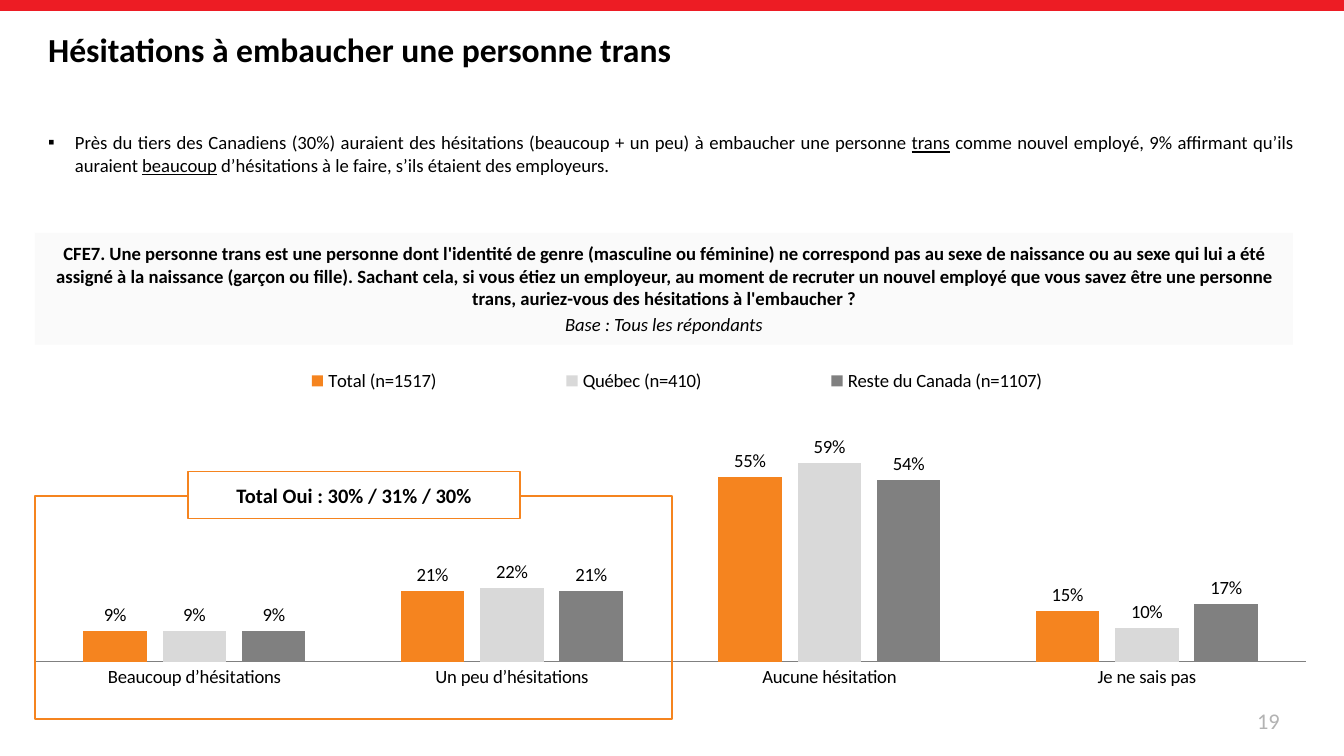
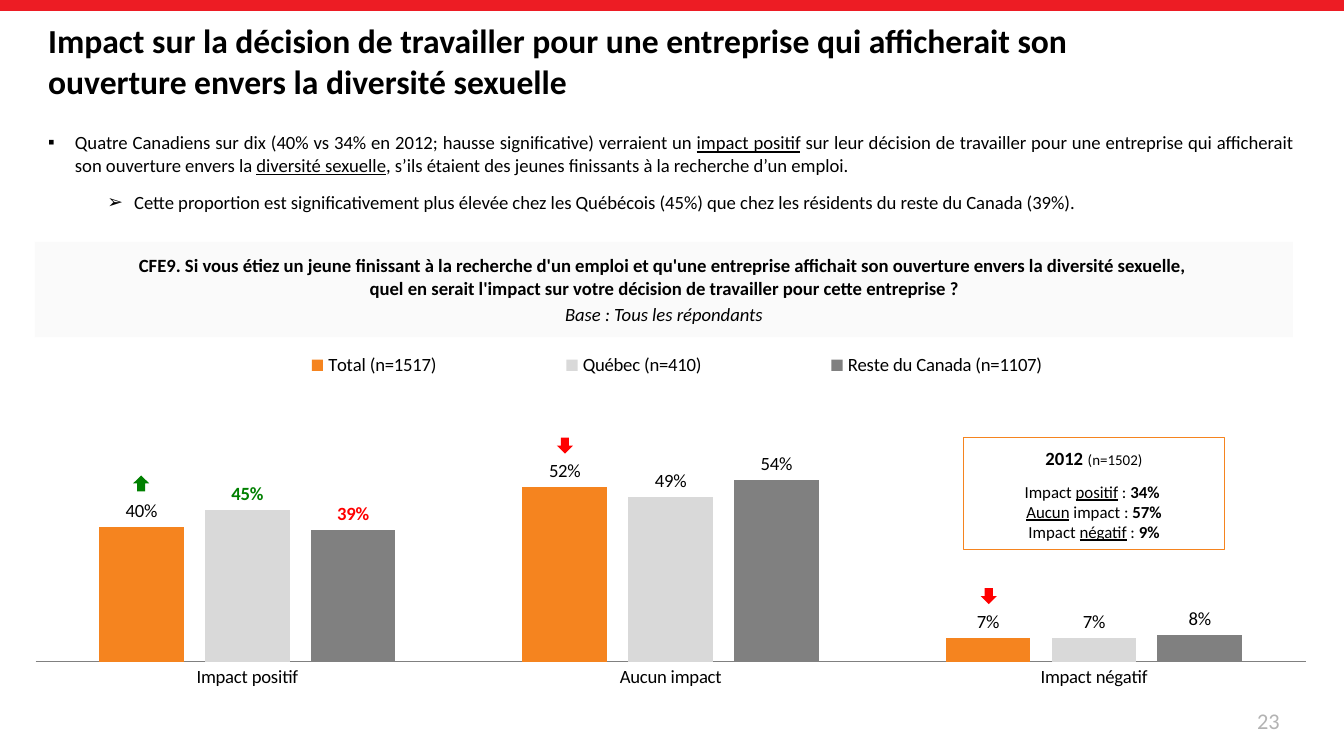
import pptx
import pptx.chart.data
import pptx.dml.color
import pptx.enum.chart
import pptx.enum.shapes
import pptx.enum.text
import pptx.oxml
import pptx.oxml.ns
import pptx.util

RGB = pptx.dml.color.RGBColor
Pt = pptx.util.Pt
SHAPE = pptx.enum.shapes.MSO_SHAPE
ALIGN = pptx.enum.text.PP_ALIGN
ANCHOR = pptx.enum.text.MSO_ANCHOR

BLACK = RGB(0x00, 0x00, 0x00)
WHITE = RGB(0xFF, 0xFF, 0xFF)
BAND_RED = RGB(0xED, 0x1C, 0x24)
ORANGE = RGB(0xF5, 0x84, 0x1F)
LIGHT_GREY = RGB(0xD9, 0xD9, 0xD9)
DARK_GREY = RGB(0x80, 0x80, 0x80)
PANEL_GREY = RGB(0xFA, 0xFA, 0xFA)
NUMBER_GREY = RGB(0xB3, 0xB3, 0xB3)
UP_GREEN = RGB(0x00, 0x80, 0x00)
DOWN_RED = RGB(0xFF, 0x00, 0x00)

FONT = "Calibri"
SLIDE_W = pptx.util.Inches(10)
SLIDE_H = SLIDE_W * 9 // 16

# Shares of the slide, in percent
LEFT = 2.6
BODY_W = 94.6
PANEL_W = 93.6
BODY_TOP = 16.5
CHART_TOP, CHART_H = 41.1, 51.6
ARROW_W, ARROW_H = 1.2, 2.1

GROUPS = (
    ("Total (n=1517)", ORANGE),
    ("Québec (n=410)", LIGHT_GREY),
    ("Reste du Canada (n=1107)", DARK_GREY),
)
BASE = [("Base : Tous les répondants", "i")]


def area(x, y, w, h):
    """Turn percentages of the slide into left, top, width and height."""
    return (int(SLIDE_W * x / 100), int(SLIDE_H * y / 100),
            int(SLIDE_W * w / 100), int(SLIDE_H * h / 100))


def style_font(font, size, color=BLACK, bold=False):
    font.name = FONT
    font.size = Pt(size)
    font.bold = bold
    font.color.rgb = color


def add_runs(p, runs, size, color=BLACK):
    """Add (text, flags[, size]) runs; flags hold b, i and u."""
    for text, flags, *own_size in runs:
        r = p.add_run()
        r.text = text
        style_font(r.font, own_size[0] if own_size else size, color, "b" in flags)
        r.font.italic = "i" in flags
        r.font.underline = "u" in flags


def write(sp, paragraphs, size, color=BLACK, align=ALIGN.LEFT, anchor=ANCHOR.MIDDLE):
    tf = sp.text_frame
    tf.word_wrap = True
    tf.vertical_anchor = anchor
    for i, runs in enumerate(paragraphs):
        p = tf.add_paragraph() if i else tf.paragraphs[0]
        p.alignment = align
        add_runs(p, runs, size, color)
    return tf.paragraphs


def add_box(s, box, kind=SHAPE.RECTANGLE, fill=None, line=None):
    sp = s.shapes.add_shape(kind, *area(*box))
    sp.shadow.inherit = False
    if fill is None:
        sp.fill.background()
    else:
        sp.fill.solid()
        sp.fill.fore_color.rgb = fill
    if line is None:
        sp.line.fill.background()
    else:
        sp.line.color.rgb = line
        sp.line.width = Pt(0.75)
    return sp


def add_frame(s, title, title_h, number):
    """Add the red band, the title and the slide number."""
    add_box(s, (0, 0, 100, 1.45), fill=BAND_RED)
    sp = s.shapes.add_textbox(*area(LEFT, 1.4, 79.2, title_h))
    write(sp, [[(title, "b")]], 18)
    sp = s.shapes.add_textbox(*area(72.9, 92.7, 23.3, 5.3))
    write(sp, [[(str(number), "")]], 12, NUMBER_GREY, ALIGN.RIGHT)


def set_bullet(p, char, indent):
    pPr = p._p.get_or_add_pPr()
    pPr.set("marL", str(pptx.util.Inches(indent)))
    pPr.set("indent", str(pptx.util.Inches(-0.2)))
    for tag, key, value in (("buFont", "typeface", "Arial"), ("buChar", "char", char)):
        pPr.append(pptx.oxml.parse_xml(
            f'<a:{tag} {pptx.oxml.ns.nsdecls("a")} {key}="{value}"/>'))


def add_findings(s, height, findings):
    """Add a main bullet and, below it, any secondary ones."""
    sp = s.shapes.add_textbox(*area(LEFT, BODY_TOP, BODY_W, height))
    ps = write(sp, findings, 10, align=ALIGN.JUSTIFY, anchor=ANCHOR.TOP)
    for i, p in enumerate(ps):
        set_bullet(p, "➢" if i else "▪", 0.64 if i else 0.2)
        p.level = 1 if i else 0
        p.space_after = Pt(6)
        if i:
            p.space_before = Pt(2)


def add_question(s, top, height, lines):
    sp = add_box(s, (LEFT, top, PANEL_W, height), fill=PANEL_GREY)
    ps = write(sp, [[(line, "b")] for line in lines] + [BASE], 10, align=ALIGN.CENTER)
    ps[-1].space_before = Pt(2)


def manual_layout(x, y, w, h, inner=False):
    target = '<c:layoutTarget val="inner"/>' if inner else ""
    modes = '<c:xMode val="edge"/><c:yMode val="edge"/>'
    sizes = "".join(f'<c:{k} val="{v}"/>' for k, v in zip("xywh", (x, y, w, h)))
    return pptx.oxml.parse_xml(
        f'<c:layout {pptx.oxml.ns.nsdecls("c")}><c:manualLayout>'
        f'{target}{modes}{sizes}</c:manualLayout></c:layout>')


def place_plot_and_legend(chart, legend_y):
    plot_area = chart._chartSpace.chart.plotArea
    legend = chart.legend._element
    for el in (plot_area, legend):
        for old in el.findall(pptx.oxml.ns.qn("c:layout")):
            el.remove(old)
    plot_area.insert(0, manual_layout(0, 0.21, 1, 0.69, inner=True))
    legend.find(pptx.oxml.ns.qn("c:legendPos")).addnext(
        manual_layout(0.12, legend_y, 0.77, 0.08))


def add_columns(s, categories, values, legend_y):
    data = pptx.chart.data.CategoryChartData(number_format="0%")
    data.categories = categories
    for (name, _), vals in zip(GROUPS, values):
        data.add_series(name, vals)
    chart = s.shapes.add_chart(
        pptx.enum.chart.XL_CHART_TYPE.COLUMN_CLUSTERED,
        *area(LEFT, CHART_TOP, BODY_W, CHART_H), data).chart
    chart.has_title = False
    style_font(chart.font, 9)
    chart.font.name = "Arial"

    chart.has_legend = True
    chart.legend.position = pptx.enum.chart.XL_LEGEND_POSITION.TOP
    chart.legend.include_in_layout = False
    style_font(chart.legend.font, 10)
    place_plot_and_legend(chart, legend_y)

    axis = chart.value_axis
    axis.minimum_scale, axis.maximum_scale, axis.major_unit = 0, 0.8, 0.1
    axis.has_major_gridlines = False
    axis.tick_labels.number_format = "0%"
    axis.tick_labels.number_format_is_linked = False
    axis.visible = False
    axis = chart.category_axis
    axis.major_tick_mark = pptx.enum.chart.XL_TICK_MARK.NONE
    axis.format.line.color.rgb = DARK_GREY
    axis.format.line.width = Pt(0.75)
    style_font(axis.tick_labels.font, 10)

    plot = chart.plots[0]
    plot.vary_by_categories = False
    plot.gap_width, plot.overlap = 150, -25
    for series, (_, color) in zip(plot.series, GROUPS):
        series.format.fill.solid()
        series.format.fill.fore_color.rgb = color
        labels = series.data_labels
        labels.show_value = True
        labels.number_format = "0%"
        labels.number_format_is_linked = False
        labels.position = pptx.enum.chart.XL_LABEL_POSITION.OUTSIDE_END
        style_font(labels.font, 10)
    return chart


def highlight_label(chart, group, category, color):
    label = chart.plots[0].series[group].points[category].data_label
    style_font(label.font, 10, color, bold=True)
    label.position = pptx.enum.chart.XL_LABEL_POSITION.OUTSIDE_END


def add_trend_arrow(s, category, top, rising):
    """Mark a change since 2012 above the Total column of a category."""
    x = 9.9 + category * BODY_W / 3
    sp = add_box(s, (x, top, ARROW_W, ARROW_H), SHAPE.UP_ARROW,
                 UP_GREEN if rising else DOWN_RED)
    sp.rotation = 0 if rising else 180


def build_hiring_slide(s):
    add_frame(s, "Hésitations à embaucher une personne trans", 10.1, 19)
    add_findings(s, 12.6, [[
        ("Près du tiers des Canadiens (30%) auraient des hésitations (beaucoup + un peu) "
         "à embaucher une personne ", ""),
        ("trans", "u"),
        (" comme nouvel employé, 9% affirmant qu’ils auraient ", ""),
        ("beaucoup", "u"),
        (" d’hésitations à le faire, s’ils étaient des employeurs.", ""),
    ]])
    add_question(s, 30.8, 14.8, [
        "CFE7. Une personne trans est une personne dont l'identité de genre (masculine ou "
        "féminine) ne correspond pas au sexe de naissance ou au sexe qui lui a été assigné "
        "à la naissance (garçon ou fille). Sachant cela, si vous étiez un employeur, au "
        "moment de recruter un nouvel employé que vous savez être une personne trans, "
        "auriez-vous des hésitations à l'embaucher ?"])
    add_columns(
        s,
        ["Beaucoup d’hésitations", "Un peu d’hésitations", "Aucune hésitation",
         "Je ne sais pas"],
        [(0.09, 0.21, 0.55, 0.15), (0.09, 0.22, 0.59, 0.10), (0.09, 0.21, 0.54, 0.17)],
        0.14)
    add_box(s, (LEFT, 65.6, 47.4, 29.5), line=ORANGE)
    sp = add_box(s, (14, 62.4, 24.7, 6.2), SHAPE.FLOWCHART_PROCESS, WHITE, ORANGE)
    write(sp, [[("Total Oui : 30% / 31% / 30%", "b")]], 11, align=ALIGN.CENTER)


def build_impact_slide(s):
    add_frame(s, "Impact sur la décision de travailler pour une entreprise qui afficherait "
                 "son ouverture envers la diversité sexuelle", 13.2, 23)
    add_findings(s, 15.3, [
        [("Quatre Canadiens sur dix (40% vs 34% en 2012; hausse significative) "
          "verraient un ", ""),
         ("impact positif", "u"),
         (" sur leur décision de travailler pour une entreprise qui afficherait son "
          "ouverture envers la ", ""),
         ("diversité sexuelle", "u"),
         (", s’ils étaient des jeunes finissants à la recherche d’un emploi.", "")],
        [("Cette proportion est significativement plus élevée chez les Québécois (45%) "
          "que chez les résidents du reste du Canada (39%).", "")],
    ])
    add_question(s, 32, 12.6, [
        "CFE9. Si vous étiez un jeune finissant à la recherche d'un emploi et qu'une "
        "entreprise affichait son ouverture envers la diversité sexuelle, ",
        "quel en serait l'impact sur votre décision de travailler pour cette entreprise ?"])
    chart = add_columns(
        s, ["Impact positif", "Aucun impact", "Impact négatif"],
        [(0.40, 0.52, 0.07), (0.45, 0.49, 0.07), (0.39, 0.54, 0.08)], 0.1)
    highlight_label(chart, 1, 0, UP_GREEN)
    highlight_label(chart, 2, 0, DOWN_RED)
    sp = add_box(s, (71.7, 57.9, 19.4, 14.8), SHAPE.FLOWCHART_PROCESS, line=ORANGE)
    ps = write(sp, [
        [("2012", "b", 10), (" ", "b", 11), ("(n=1502)", "", 8)],
        [("Impact ", ""), ("positif", "u"), (" : ", ""), ("34% ", "b")],
        [("Aucun", "u"), (" impact : ", ""), ("57%", "b")],
        [("Impact ", ""), ("négatif", "u"), (" : ", ""), ("9%", "b")],
    ], 9, align=ALIGN.CENTER)
    ps[0].space_after = Pt(6)
    for category, (top, rising) in enumerate(((62.9, True), (57.9, False), (77.8, False))):
        add_trend_arrow(s, category, top, rising)


def main():
    prs = pptx.Presentation()
    prs.slide_width, prs.slide_height = SLIDE_W, SLIDE_H
    for build in (build_hiring_slide, build_impact_slide):
        build(prs.slides.add_slide(prs.slide_layouts[6]))
    prs.save("out.pptx")


if __name__ == "__main__":
    main()
